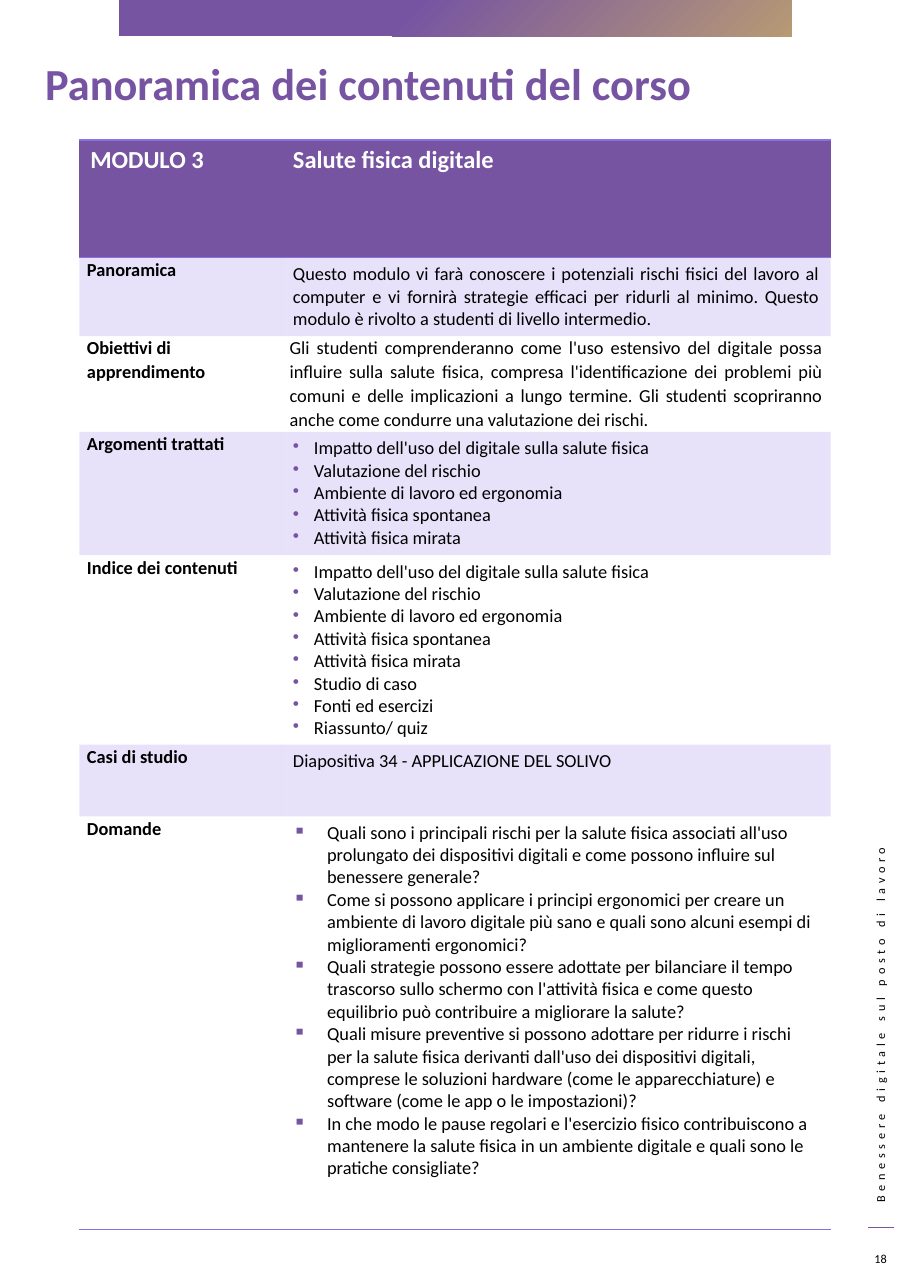
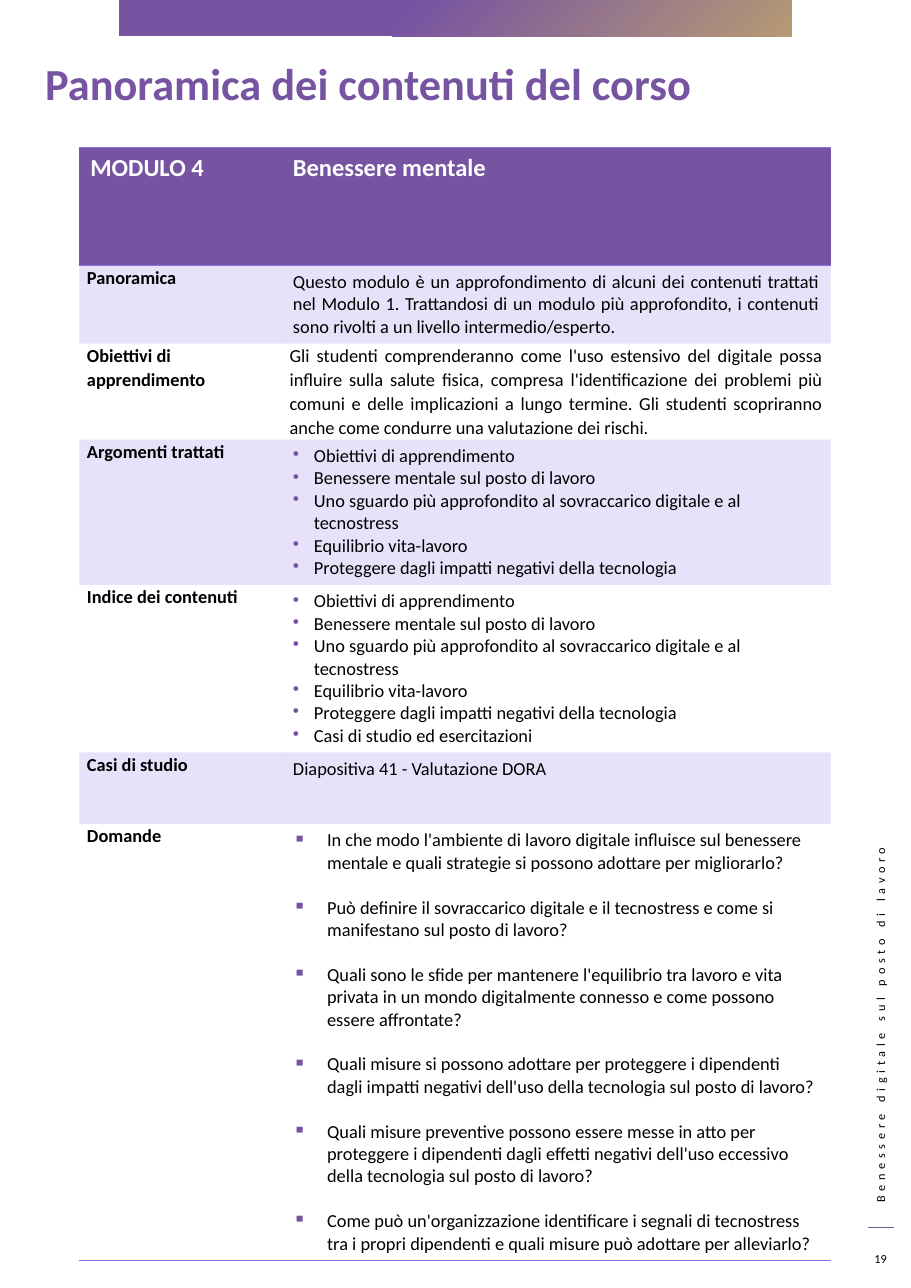
from dataclasses import dataclass

from lxml import etree
from pptx import Presentation, util as u
from pptx.dml.color import RGBColor
from pptx.enum import shapes, text
from pptx.oxml.ns import qn


@dataclass(frozen=True)
class Theme:
    font: str = "Calibri"
    purple: str = "7654A2"
    lilac: str = "8971E1"
    tan: str = "B79974"
    white: str = "FFFFFF"
    black: str = "000000"
    title: int = 29
    heading: int = 16
    body: int = 12
    small: int = 8


THEME = Theme()
Inches = u.Inches
ALIGN = text.PP_ALIGN
NO_GRID_STYLE = "{2D5ABB26-0587-4C30-8999-92F81FD0307C}"

LABELS = ["Panoramica", "Obiettivi di apprendimento", "Argomenti trattati",
          "Indice dei contenuti", "Casi di studio", "Domande"]
OBJECTIVES = (
    "Gli studenti comprenderanno come l'uso estensivo del digitale possa influire sulla "
    "salute fisica, compresa l'identificazione dei problemi più comuni e delle implicazioni "
    "a lungo termine. Gli studenti scopriranno anche come condurre una valutazione dei rischi."
)
PHYSICAL_TOPICS = [
    "Impatto dell'uso del digitale sulla salute fisica",
    "Valutazione del rischio",
    "Ambiente di lavoro ed ergonomia",
    "Attività fisica spontanea",
    "Attività fisica mirata",
]
MENTAL_TOPICS = [
    "Obiettivi di apprendimento",
    "Benessere mentale sul posto di lavoro",
    "Uno sguardo più approfondito al sovraccarico digitale e al tecnostress",
    "Equilibrio vita-lavoro",
    "Proteggere dagli impatti negativi della tecnologia",
]
MODULES = [
    dict(
        number=3, name="Salute fisica digitale", top=1.27, question_gap=0,
        heights=[1.07, 0.71, 0.87, 1.12, 1.72, 0.65, 3.75],
        overview="Questo modulo vi farà conoscere i potenziali rischi fisici del lavoro al "
                 "computer e vi fornirà strategie efficaci per ridurli al minimo. Questo "
                 "modulo è rivolto a studenti di livello intermedio.",
        topics=PHYSICAL_TOPICS,
        contents=PHYSICAL_TOPICS + ["Studio di caso", "Fonti ed esercizi", "Riassunto/ quiz"],
        case="Diapositiva 34 - APPLICAZIONE DEL SOLIVO",
        questions=[
            "Quali sono i principali rischi per la salute fisica associati all'uso prolungato "
            "dei dispositivi digitali e come possono influire sul benessere generale?",
            "Come si possono applicare i principi ergonomici per creare un ambiente di lavoro "
            "digitale più sano e quali sono alcuni esempi di miglioramenti ergonomici?",
            "Quali strategie possono essere adottate per bilanciare il tempo trascorso sullo "
            "schermo con l'attività fisica e come questo equilibrio può contribuire a "
            "migliorare la salute?",
            "Quali misure preventive si possono adottare per ridurre i rischi per la salute "
            "fisica derivanti dall'uso dei dispositivi digitali, comprese le soluzioni hardware "
            "(come le apparecchiature) e software (come le app o le impostazioni)?",
            "In che modo le pause regolari e l'esercizio fisico contribuiscono a mantenere la "
            "salute fisica in un ambiente digitale e quali sono le pratiche consigliate?",
        ],
    ),
    dict(
        number=4, name="Benessere mentale", top=1.34, question_gap=14.65,
        heights=[1.07, 0.71, 0.87, 1.32, 1.52, 0.65, 3.96],
        overview="Questo modulo è un approfondimento di alcuni dei contenuti trattati nel "
                 "Modulo 1. Trattandosi di un modulo più approfondito, i contenuti sono "
                 "rivolti a un livello intermedio/esperto.",
        topics=MENTAL_TOPICS,
        contents=MENTAL_TOPICS + ["Casi di studio ed esercitazioni"],
        case="Diapositiva 41 - Valutazione DORA",
        questions=[
            "In che modo l'ambiente di lavoro digitale influisce sul benessere mentale e quali "
            "strategie si possono adottare per migliorarlo?",
            "Può definire il sovraccarico digitale e il tecnostress e come si manifestano sul "
            "posto di lavoro?",
            "Quali sono le sfide per mantenere l'equilibrio tra lavoro e vita privata in un "
            "mondo digitalmente connesso e come possono essere affrontate?",
            "Quali misure si possono adottare per proteggere i dipendenti dagli impatti "
            "negativi dell'uso della tecnologia sul posto di lavoro?",
            "Quali misure preventive possono essere messe in atto per proteggere i dipendenti "
            "dagli effetti negativi dell'uso eccessivo della tecnologia sul posto di lavoro?",
            "Come può un'organizzazione identificare i segnali di tecnostress tra i propri "
            "dipendenti e quali misure può adottare per alleviarlo?",
        ],
    ),
]


def write(frame, lines, size=THEME.body, color=THEME.black, bold=False, align=ALIGN.LEFT,
          bullet=None, indent=0, gap=0, line_spacing=None, after=0, tracking=0):
    """Fill a text frame, one paragraph a line; gap is the space between paragraphs."""
    frame.word_wrap = True
    for index, line in enumerate([lines] if isinstance(lines, str) else lines):
        para = frame.paragraphs[0] if index == 0 else frame.add_paragraph()
        para.alignment = align
        para.space_before = u.Pt(gap if index else 0)
        para.space_after = u.Pt(after)
        if line_spacing:
            para.line_spacing = line_spacing
        if bullet:
            props = para._p.get_or_add_pPr()
            props.set("marL", str(Inches(indent)))
            props.set("indent", str(-Inches(indent)))
            tint = etree.SubElement(props, qn("a:buClr"))
            etree.SubElement(tint, qn("a:srgbClr"), val=THEME.purple)
            etree.SubElement(props, qn("a:buChar"), char=bullet)
        span = para.add_run()
        span.text = line
        span.font.name = THEME.font
        span.font.size = u.Pt(size)
        span.font.bold = bold
        span.font.color.rgb = RGBColor.from_string(color)
        if tracking:
            span._r.get_or_add_rPr().set("spc", str(tracking * 100))


def style_cell(cell, fill=None, alpha=100, borders=(), tight=False):
    """Set borders (lnT, lnB in that order), then the fill, as the schema requires."""
    props = cell._tc.get_or_add_tcPr()
    for side in borders:
        rule = etree.SubElement(props, qn(f"a:{side}"), w=str(u.Pt(1)))
        paint = etree.SubElement(rule, qn("a:solidFill"))
        etree.SubElement(paint, qn("a:srgbClr"), val=THEME.lilac)
    if fill:
        cell.fill.solid()
        cell.fill.fore_color.rgb = RGBColor.from_string(fill)
        if alpha < 100:
            tint = props.find(qn("a:solidFill")).find(qn("a:srgbClr"))
            etree.SubElement(tint, qn("a:alpha"), val=str(alpha * 1000))
    else:
        cell.fill.background()
    if tight:
        cell.margin_left = cell.margin_right = Inches(0.07)
        cell.margin_top = cell.margin_bottom = 0


deck = Presentation()
deck.slide_width, deck.slide_height = Inches(8.27), Inches(11.69)

for page_number, module in enumerate(MODULES, start=18):
    page = deck.slides.add_slide(deck.slide_layouts[5])

    # Top band
    band = page.shapes.add_shape(shapes.MSO_SHAPE.RECTANGLE,
                                 Inches(1.08), 0, Inches(6.11), Inches(0.33))
    band.shadow.inherit = False
    band.line.fill.background()
    band.fill.gradient()
    for stop, (position, color) in zip(band.fill.gradient_stops,
                                       [(0, THEME.tan), (0.58, THEME.purple)]):
        stop.position = position
        stop.color.rgb = RGBColor.from_string(color)
    gradient = band._element.spPr.find(qn("a:gradFill"))
    gradient.remove(gradient.find(qn("a:lin")))
    circle = etree.SubElement(gradient, qn("a:path"), path="circle")
    etree.SubElement(circle, qn("a:fillToRect"), l="100000", t="100000")

    # Title
    title = page.shapes.title
    title.left, title.top, title.width, title.height = map(Inches, (0.31, 0.44, 7.11, 0.81))
    title.text_frame.auto_size = text.MSO_AUTO_SIZE.NONE
    title.text_frame.vertical_anchor = text.MSO_ANCHOR.TOP
    title.text_frame.margin_top = Inches(0.07)
    write(title.text_frame, "Panoramica dei contenuti del corso",
          size=THEME.title, color=THEME.purple, bold=True)

    # Side label, rule and page number
    side_label = page.shapes.add_textbox(*map(Inches, (6.26, 9.21, 3.47, 0.24)))
    side_label.rotation = 270
    write(side_label.text_frame, "Benessere digitale sul posto di lavoro",
          size=THEME.small, align=ALIGN.RIGHT, tracking=3)
    rule = page.shapes.add_connector(shapes.MSO_CONNECTOR.STRAIGHT,
                                     *map(Inches, (8.12, 11.14, 7.88, 11.14)))
    rule.line.color.rgb = RGBColor.from_string(THEME.purple)
    rule.line.width = u.Pt(0.75)
    etree.SubElement(rule._element.spPr, qn("a:effectLst"))
    number_box = page.shapes.add_textbox(*map(Inches, (7.8, 11.28, 0.39, 0.29)))
    number_box.text_frame.vertical_anchor = text.MSO_ANCHOR.MIDDLE
    write(number_box.text_frame, str(page_number), size=THEME.small, align=ALIGN.CENTER)

    # Module table
    heights = module["heights"]
    table_frame = page.shapes.add_table(len(heights), 2, Inches(0.72), Inches(module["top"]),
                                        Inches(6.82), Inches(sum(heights)))
    table = table_frame.table
    table.horz_banding = table.first_row = False
    table._tbl.tblPr.find(qn("a:tableStyleId")).text = NO_GRID_STYLE
    for column, width in zip(table.columns, (1.84, 4.98)):
        column.width = Inches(width)
    for row, height in zip(table.rows, heights):
        row.height = Inches(height)

    for column, heading in enumerate((f"MODULO {module['number']}", module["name"])):
        cell = table.cell(0, column)
        style_cell(cell, fill=THEME.purple, borders=("lnT", "lnB"))
        write(cell.text_frame, heading, size=THEME.heading, color=THEME.white, bold=True)

    loose = dict(line_spacing=1.07, after=8)
    dots = dict(bullet="•", indent=0.19)
    details = [
        (module["overview"], dict(align=ALIGN.JUSTIFY)),
        (OBJECTIVES, dict(align=ALIGN.JUSTIFY, **loose)),
        (module["topics"], dots),
        (module["contents"], dots),
        (module["case"], {}),
        (module["questions"], dict(bullet="▪", indent=0.31, gap=module["question_gap"])),
    ]
    for row, (label, (detail, layout)) in enumerate(zip(LABELS, details), start=1):
        label_cell, detail_cell = table.cell(row, 0), table.cell(row, 1)
        look = dict(fill=THEME.lilac if row % 2 else None, alpha=20,
                    borders=("lnB",) if row == len(LABELS) else ())
        style_cell(label_cell, tight=True, **look)
        style_cell(detail_cell, tight=detail is OBJECTIVES, **look)
        write(label_cell.text_frame, label, bold=True, **loose)
        write(detail_cell.text_frame, detail, **layout)

deck.save("out.pptx")
